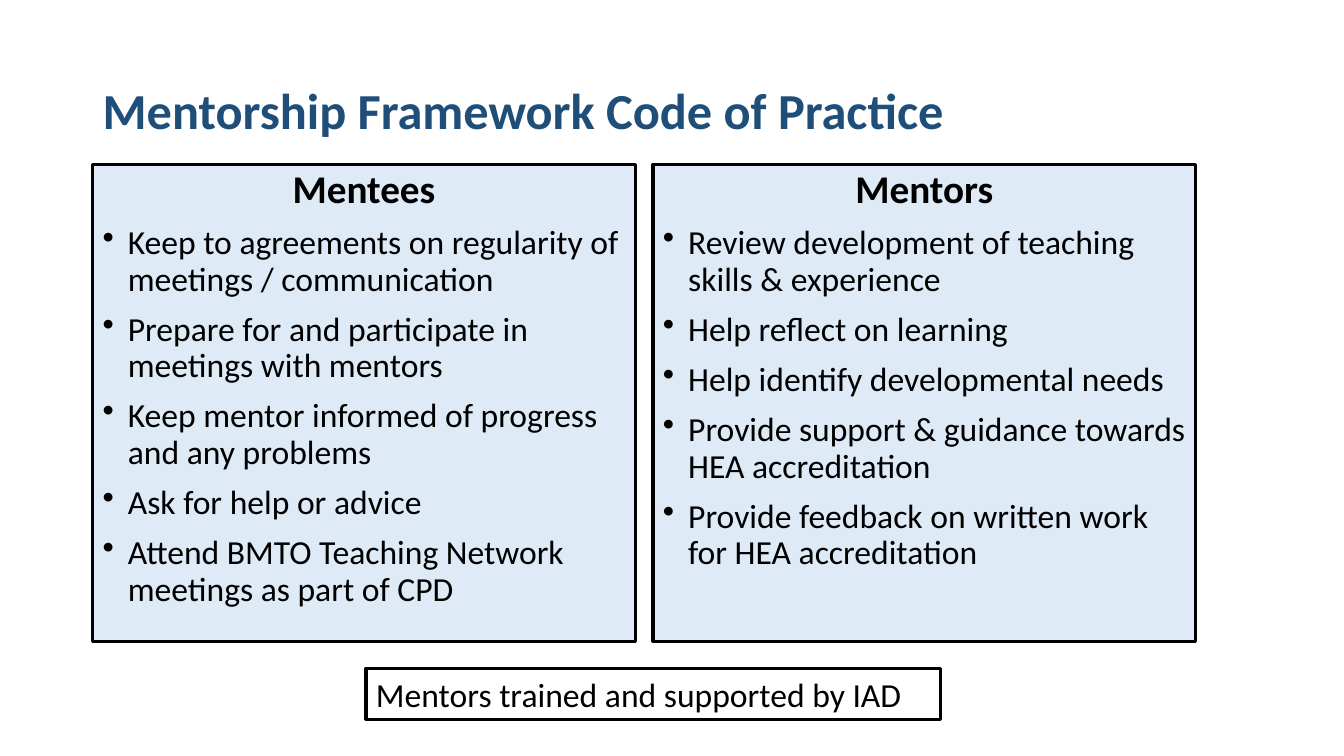
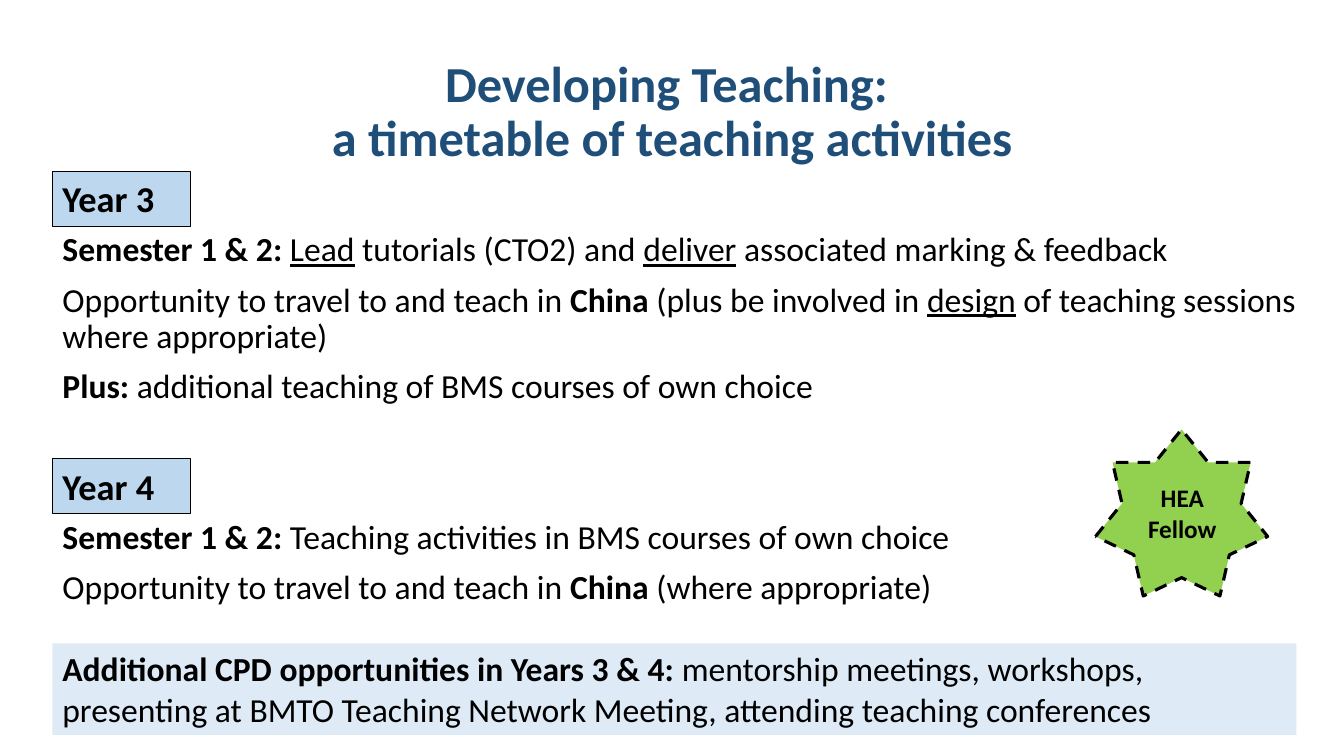
from pptx import Presentation
from pptx.dml.color import RGBColor
from pptx.enum.dml import MSO_LINE
from pptx.enum.shapes import MSO_SHAPE
from pptx.enum.text import MSO_ANCHOR, PP_ALIGN
from pptx.oxml.xmlchemy import OxmlElement
from pptx.util import Pt

LEFT, CENTER = PP_ALIGN.LEFT, PP_ALIGN.CENTER
TOP, MIDDLE = MSO_ANCHOR.TOP, MSO_ANCHOR.MIDDLE
STAR, DASH = MSO_SHAPE.STAR_7_POINT, MSO_LINE.DASH

FONT = "Calibri"
COLORS = {
    "title": "1F4E79",
    "text": "000000",
    "panel": "DEEBF7",
    "year": "BDD7EE",
    "star": "92D050",
}


def color(name):
    return RGBColor.from_string(COLORS[name])


class SlideBuilder:
    """Holds the deck, its style and the current page."""

    def __init__(self):
        self.deck = Presentation()
        self.deck.slide_width, self.deck.slide_height = Pt(960), Pt(540)
        self.page = None

    def new_page(self, title, align=LEFT):
        self.page = self.deck.slides.add_slide(self.deck.slide_layouts[6])
        frame = self.box(66.25, 28.75, 828, 104.5, anchor=MIDDLE)
        para = self.paragraph(frame, [(title, "")], 36, align, spacing=0.9, ink="title")
        para.font.bold = True

    def paint(self, shape, fill, line, dash=None):
        if fill:
            shape.fill.solid()
            shape.fill.fore_color.rgb = color(fill)
        if line:
            shape.line.color.rgb = color("text")
            shape.line.width = Pt(line)
        if dash:
            shape.line.dash_style = dash

    def box(self, left, top, width, height, fill=None, line=None, anchor=TOP):
        box = self.page.shapes.add_textbox(Pt(left), Pt(top), Pt(width), Pt(height))
        self.paint(box, fill, line)
        frame = box.text_frame
        frame.word_wrap = True
        frame.vertical_anchor = anchor
        return frame

    def paragraph(self, frame, spans, size=24, align=LEFT, spacing=1.0, before=0, ink="text"):
        """Spans are (text, style) pairs; style is "", "b" (bold) or "u" (underlined)."""
        para = frame.paragraphs[0]
        if para.runs:
            para = frame.add_paragraph()
        para.alignment, para.line_spacing, para.space_before = align, spacing, Pt(before)
        para.font.name, para.font.size = FONT, Pt(size)
        para.font.color.rgb = color(ink)
        for text, style in spans:
            for number, part in enumerate(text.split("\n")):
                if number:
                    para.add_line_break()
                span = para.add_run()
                span.text = part
                if style == "b":
                    span.font.bold = True
                elif style == "u":
                    span.font.underline = True
        return para

    def body(self, frame, spans, **style):
        return self.paragraph(frame, spans, spacing=0.9, before=10, **style)

    def bullet(self, frame, text):
        properties = self.body(frame, [(text, "")])._p.get_or_add_pPr()
        properties.set("marL", str(Pt(18)))
        properties.set("indent", str(Pt(-18)))
        mark = OxmlElement("a:buChar")
        mark.set("char", "•")
        properties.insert_element_before(mark, "a:tabLst", "a:defRPr", "a:extLst")

    def panel(self, left, heading, points):
        frame = self.box(left, 117.5, 387.5, 340.5, "panel", 2.25)
        self.body(frame, [(heading, "b")], size=28, align=CENTER)
        for point in points:
            self.bullet(frame, point)

    def year(self, top, name, lines):
        label = self.box(37.5, top, 98.5, 39, "year", 0.75)
        self.paragraph(label, [(name, "b")], 26)
        frame = self.box(37.5, top + 40.25, 910, 130)
        for spans in lines:
            self.body(frame, spans)

    def star(self, left, top, width, height):
        shape = self.page.shapes.add_shape(STAR, Pt(left), Pt(top), Pt(width), Pt(height))
        shape.shadow.inherit = False
        self.paint(shape, "star", 2.25, DASH)


def mentorship(slides):
    slides.new_page("Mentorship Framework Code of Practice")
    # Two facing panels
    slides.panel(66.25, "Mentees", [
        "Keep to agreements on regularity of meetings / communication",
        "Prepare for and participate in meetings with mentors",
        "Keep mentor informed of progress and any problems",
        "Ask for help or advice",
        "Attend BMTO Teaching Network meetings as part of CPD",
    ])
    slides.panel(466.5, "Mentors", [
        "Review development of teaching skills & experience",
        "Help reflect on learning",
        "Help identify developmental needs",
        "Provide support & guidance towards HEA accreditation",
        "Provide feedback on written work for HEA accreditation",
    ])
    # Closing note
    note = slides.box(261.5, 477.5, 410.5, 36.25, line=2.25)
    slides.paragraph(note, [("Mentors trained and supported by IAD", "")])


def timetable(slides):
    slides.new_page("Developing Teaching: \na timetable of teaching activities", CENTER)
    semesters = ("Semester 1 & 2: ", "b")
    travel = [("Opportunity to travel to and teach in ", ""), ("China", "b")]
    # Year sections
    slides.year(122.5, "Year 3", [
        [semesters, ("Lead", "u"), (" tutorials (CTO2) and ", ""), ("deliver", "u"),
         (" associated marking & feedback", "")],
        travel + [(" (plus be involved in ", ""), ("design", "u"),
                  (" of teaching sessions where appropriate)", "")],
        [("Plus: ", "b"), ("additional teaching of BMS courses of own choice", "")],
    ])
    slides.year(327.75, "Year 4", [
        [semesters, ("Teaching activities in BMS courses of own choice", "")],
        travel + [(" (where appropriate)", "")],
    ])
    # Further opportunities
    band = slides.box(37.5, 459.5, 888.5, 65.5, "panel")
    slides.paragraph(band, [
        ("Additional CPD opportunities in Years 3 & 4: ", "b"),
        ("mentorship meetings, workshops, presenting at BMTO Teaching Network Meeting, "
         "attending teaching conferences", ""),
    ])
    # Award star
    slides.star(782.5, 306.75, 123, 119)
    label = slides.box(810.5, 341.25, 68, 51)
    for word in ("HEA", "Fellow"):
        slides.paragraph(label, [(word, "b")], 18, CENTER)


def main():
    slides = SlideBuilder()
    mentorship(slides)
    timetable(slides)
    slides.deck.save("out.pptx")


if __name__ == "__main__":
    main()
